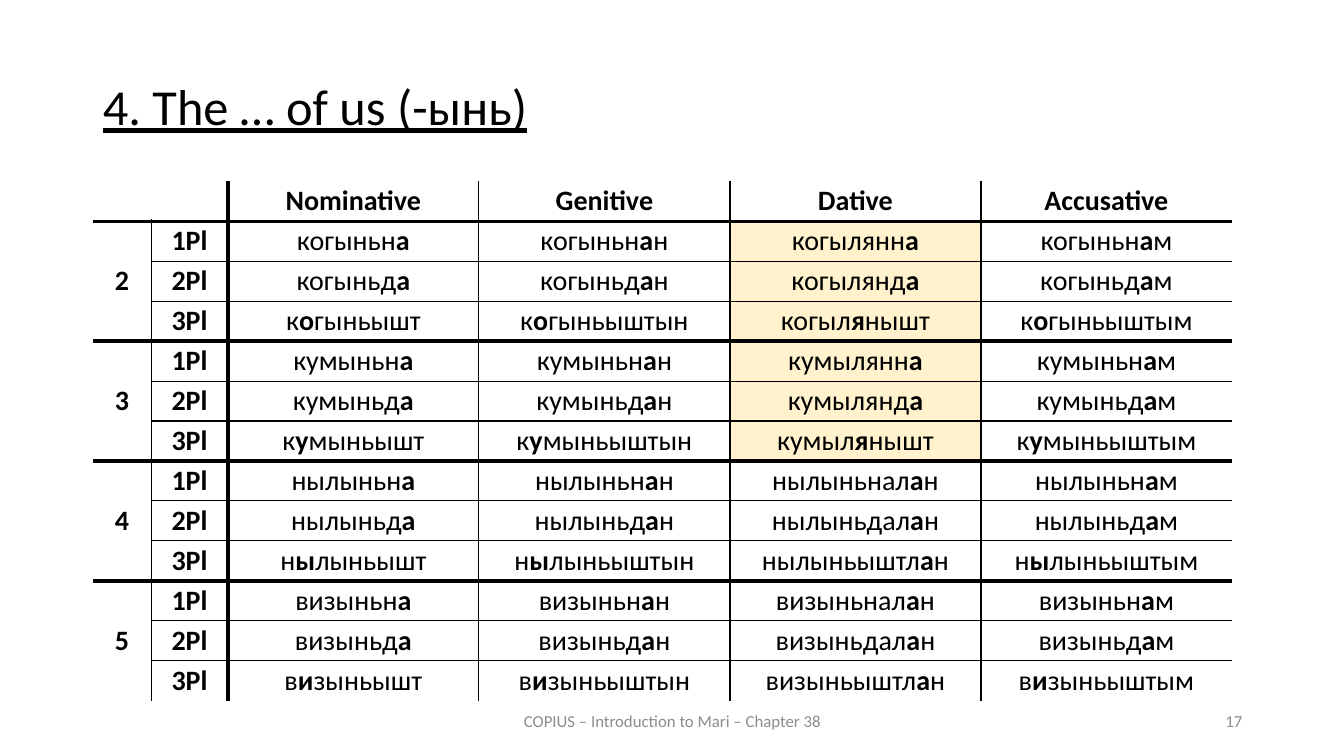
from dataclasses import dataclass

from lxml import etree
from pptx import Presentation
from pptx.dml.color import RGBColor
from pptx.enum.text import MSO_ANCHOR, PP_ALIGN
from pptx.oxml.ns import qn
from pptx.util import Inches, Pt

FONT = "Calibri"
BLACK = "000000"
GREY = "8C8C8C"
HIGHLIGHT = "FFF2CC"
NO_STYLE = "{2D5ABB26-0587-4C30-8999-92F81FD0307C}"
TABLE_LEFT = 0.92
TABLE_TOP = 1.8
TABLE_BOTTOM = 6.95
COLUMN_WIDTHS = [0.58, 0.76] + [2.49] * 4
COLUMN_RULES = [0, 1, 3, 1, 1, 1, 0]
DATIVE_COLUMN = 4
HEADINGS = ["", "", "*Nominative*", "*Genitive*", "*Dative*", "*Accusative*"]
PERSONS = ["1Pl", "2Pl", "3Pl"]


@dataclass
class Numeral:
    digit: str
    forms: list[list[str]]
    special_dative: bool = False


@dataclass
class FooterText:
    wording: str
    left: float
    width: float
    alignment: PP_ALIGN


NUMERALS = [
    Numeral("2", [
        ["когыньн*а*", "когыньн*а*н", "когылянн*а*", "когыньн*а*м"],
        ["когыньд*а*", "когыньд*а*н", "когылянд*а*", "когыньд*а*м"],
        ["к*о*гыньышт", "к*о*гыньыштын", "когыл*я*нышт", "к*о*гыньыштым"],
    ], special_dative=True),
    Numeral("3", [
        ["кумыньн*а*", "кумыньн*а*н", "кумылянн*а*", "кумыньн*а*м"],
        ["кумыньд*а*", "кумыньд*а*н", "кумылянд*а*", "кумыньд*а*м"],
        ["к*у*мыньышт", "к*у*мыньыштын", "кумыл*я*нышт", "к*у*мыньыштым"],
    ], special_dative=True),
    Numeral("4", [
        ["нылыньн*а*", "нылыньн*а*н", "нылыньнал*а*н", "нылыньн*а*м"],
        ["нылыньд*а*", "нылыньд*а*н", "нылыньдал*а*н", "нылыньд*а*м"],
        ["н*ы*лыньышт", "н*ы*лыньыштын", "нылыньыштл*а*н", "н*ы*лыньыштым"],
    ]),
    Numeral("5", [
        ["визыньн*а*", "визыньн*а*н", "визыньнал*а*н", "визыньн*а*м"],
        ["визыньд*а*", "визыньд*а*н", "визыньдал*а*н", "визыньд*а*м"],
        ["в*и*зыньышт", "в*и*зыньыштын", "визыньыштл*а*н", "в*и*зыньыштым"],
    ]),
]
FOOTERS = [
    FooterText("COPIUS – Introduction to Mari – Chapter 38", 4.42, 4.5, PP_ALIGN.CENTER),
    FooterText("17", 9.42, 3, PP_ALIGN.RIGHT),
]
ROW_HEIGHT = (TABLE_BOTTOM - TABLE_TOP) / (1 + len(NUMERALS) * len(PERSONS))


def colour(hex_value: str) -> RGBColor:
    return RGBColor.from_string(hex_value)


def add_run(paragraph, wording: str, size: float, hex_value: str, bold: bool = False):
    run = paragraph.add_run()
    run.text = wording
    run.font.name = FONT
    run.font.size = Pt(size)
    run.font.bold = bold
    run.font.color.rgb = colour(hex_value)
    return run


def add_stressed(paragraph, marked: str) -> None:
    for index, part in enumerate(marked.split("*")):
        if part:
            add_run(paragraph, part, 20, BLACK, bold=index % 2 == 1)


def set_borders(cell, left: float, right: float, top: float, bottom: float) -> None:
    properties = cell._tc.get_or_add_tcPr()
    for side, weight in zip("LRTB", (left, right, top, bottom)):
        line = etree.SubElement(properties, qn(f"a:ln{side}"), w=str(Pt(weight)))
        if weight:
            fill = etree.SubElement(line, qn("a:solidFill"))
            etree.SubElement(fill, qn("a:srgbClr"), val=BLACK)
        else:
            etree.SubElement(line, qn("a:noFill"))


def fill_cell(cell, marked: str, highlighted: bool) -> None:
    cell.margin_left = cell.margin_right = Inches(0.07)
    cell.margin_top = cell.margin_bottom = 0
    cell.vertical_anchor = MSO_ANCHOR.MIDDLE
    paragraph = cell.text_frame.paragraphs[0]
    paragraph.alignment = PP_ALIGN.CENTER
    add_stressed(paragraph, marked)
    if highlighted:
        cell.fill.solid()
        cell.fill.fore_color.rgb = colour(HIGHLIGHT)
    else:
        cell.fill.background()


def add_paradigm(slide, numeral: Numeral, top: float, headed: bool, closed: bool) -> float:
    rows = [HEADINGS] if headed else []
    first_form = len(rows)
    for person, forms in zip(PERSONS, numeral.forms):
        digit = f"*{numeral.digit}*" if person == PERSONS[0] else ""
        rows.append([digit, f"*{person}*", *forms])
    row_rules = [0] * first_form + [3, 1, 1, 3 if closed else 0]

    height = ROW_HEIGHT * len(rows)
    frame = slide.shapes.add_table(
        len(rows), len(COLUMN_WIDTHS), Inches(TABLE_LEFT), Inches(top),
        Inches(sum(COLUMN_WIDTHS)), Inches(height))
    table = frame.table
    table.first_row = table.horz_banding = False
    table._tbl.tblPr.find(qn("a:tableStyleId")).text = NO_STYLE
    for column, width in zip(table.columns, COLUMN_WIDTHS):
        column.width = Inches(width)
    for row in table.rows:
        row.height = Inches(ROW_HEIGHT)
    table.cell(first_form, 0).merge(table.cell(len(rows) - 1, 0))

    for r, row in enumerate(rows):
        for c, marked in enumerate(row):
            left, right = COLUMN_RULES[c:c + 2]
            above, below = row_rules[r:r + 2]
            if r < first_form and c < 2:
                left, right = 0, 3 * c
            elif c == 0:
                above = above if r == first_form else 0
                below = row_rules[-1]
            cell = table.cell(r, c)
            set_borders(cell, left, right, above, below)
            special = numeral.special_dative and c == DATIVE_COLUMN and r >= first_form
            fill_cell(cell, marked, special)
    return top + height


def add_title(slide) -> None:
    title = slide.shapes.title
    title.left, title.top = Inches(0.92), Inches(0.76)
    title.width, title.height = Inches(11.5), Inches(0.83)
    title.text_frame.vertical_anchor = MSO_ANCHOR.TOP
    paragraph = title.text_frame.paragraphs[0]
    paragraph.alignment = PP_ALIGN.JUSTIFY
    paragraph.line_spacing = 0.9
    paragraph.space_before = Pt(12)
    add_run(paragraph, "4. The … of us (-ынь)", 36, BLACK).font.underline = True


def add_footer(slide, footer: FooterText) -> None:
    box = slide.shapes.add_textbox(
        Inches(footer.left), Inches(TABLE_BOTTOM), Inches(footer.width), Inches(0.4))
    box.text_frame.word_wrap = True
    box.text_frame.vertical_anchor = MSO_ANCHOR.MIDDLE
    paragraph = box.text_frame.paragraphs[0]
    paragraph.alignment = footer.alignment
    add_run(paragraph, footer.wording, 12, GREY)


def main() -> None:
    presentation = Presentation()
    presentation.slide_width = Inches(13.33)
    presentation.slide_height = Inches(7.5)
    slide = presentation.slides.add_slide(presentation.slide_layouts[5])
    add_title(slide)
    for footer in FOOTERS:
        add_footer(slide, footer)
    top = TABLE_TOP
    for numeral in NUMERALS:
        top = add_paradigm(slide, numeral, top, headed=numeral is NUMERALS[0],
                           closed=numeral is not NUMERALS[-1])
    presentation.save("out.pptx")


if __name__ == "__main__":
    main()
